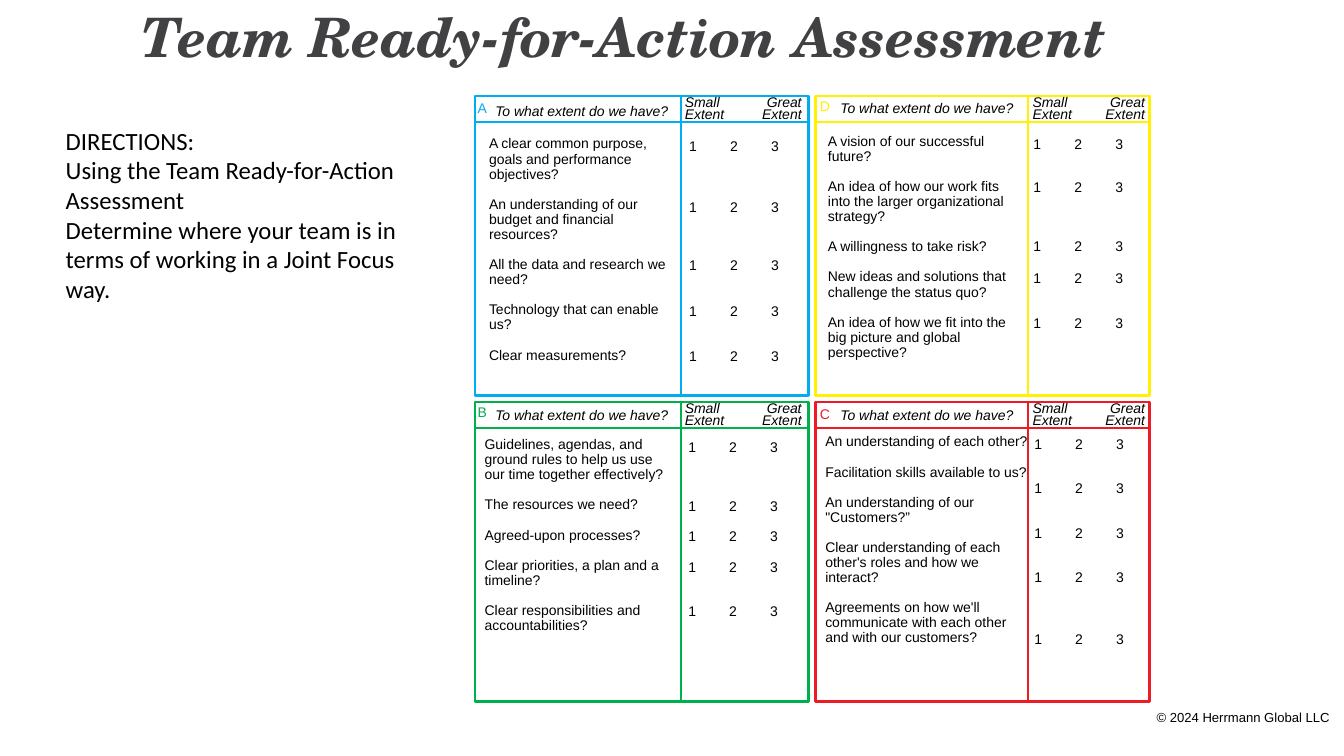
from lxml import etree
from pptx import Presentation, util as u
from pptx.dml.color import RGBColor
from pptx.enum import shapes, text
from pptx.oxml.ns import qn

LEFT, CENTER, RIGHT = text.PP_ALIGN.LEFT, text.PP_ALIGN.CENTER, text.PP_ALIGN.RIGHT
PANEL_WIDTH, PANEL_HEIGHT = 3.75, 3.37
TAB_STEP = 0.46

presentation = Presentation()
presentation.slide_width = u.Inches(15.11)
presentation.slide_height = u.Inches(8.5)
slide = presentation.slides.add_slide(presentation.slide_layouts[5])


def colour(value):
    return RGBColor.from_string(value)


def write(box, lines, size=11.3, font="Arial", ink="000000", italic=False,
          align=LEFT, spacing=None, gap=0, wrap=True, tabs=()):
    frame = box.text_frame
    frame.word_wrap = wrap
    for index, line in enumerate(lines):
        paragraph = frame.paragraphs[0] if index == 0 else frame.add_paragraph()
        paragraph.alignment = align
        if spacing:
            paragraph.line_spacing = spacing
        if index and gap:
            paragraph.space_before = u.Pt(gap)
        if tabs:
            stops = etree.SubElement(paragraph._p.get_or_add_pPr(), qn("a:tabLst"))
            for stop in tabs:
                etree.SubElement(stops, qn("a:tab"), pos=str(u.Inches(stop)), algn="l")
        run = paragraph.add_run()
        run.text = line
        run.font.size = u.Pt(size)
        run.font.name = font
        run.font.italic = italic
        run.font.color.rgb = colour(ink)


# Title
title = slide.shapes.title
title.left, title.top = u.Inches(1.49), u.Inches(0.07)
title.width, title.height = u.Inches(13.6), u.Inches(1.05)
title.text_frame.vertical_anchor = text.MSO_ANCHOR.TOP
write(title, ["Team Ready-for-Action Assessment"], 44, "TeX Gyre Schola", "414042",
      italic=True, spacing=0.9)
title.text_frame.paragraphs[0].runs[0].font.bold = True

# Directions and copyright line
directions = slide.shapes.add_textbox(*map(u.Inches, (0.64, 1.36, 3.93, 2.12)))
write(directions, [
    "DIRECTIONS:",
    "Using the Team Ready-for-Action Assessment",
    "Determine where your team is in terms of working in a Joint Focus way.",
], 20, "Calibri")
copyright_line = slide.shapes.add_textbox(*map(u.Inches, (12.83, 7.93, 2.29, 0.28)))
write(copyright_line, ["© 2024 Herrmann Global LLC"], 10.6, align=CENTER)

# Columns: panel left, divider, letter, question, small extent, great extent
left_column = (5.34, 7.66, 5.27, 5.47, 7.6, 8.42)
right_column = (9.17, 11.56, 9.12, 9.35, 11.51, 12.28)
upper, lower = 1.08, 4.52

# Quadrants: letter, its top, question top, colour, column, panel top,
# statements box, rating left, then each statement with the top of its rating
quadrants = [
    ("A", 1.07, 1.1, "00ADEE", left_column, upper, (5.4, 1.49, 2.2, 2.67), 7.65, [
        ("A clear common purpose, goals and performance objectives?", 1.5),
        ("An understanding of our budget and financial resources?", 2.18),
        ("All the data and research we need?", 2.84),
        ("Technology that can enable us?", 3.35),
        ("Clear measurements?", 3.86)]),
    ("D", 1.05, 1.07, "FFF100", right_column, upper, (9.21, 1.46, 2.26, 2.67), 11.52, [
        ("A vision of our successful future?", 1.47),
        ("An idea of how our work fits into the larger organizational strategy?", 1.96),
        ("A willingness to take risk?", 2.62),
        ("New ideas and solutions that challenge the status quo?", 2.98),
        ("An idea of how we fit into the big picture and global perspective?", 3.49)]),
    ("B", 4.49, 4.52, "00B04C", left_column, lower, (5.35, 4.87, 2.25, 2.33), 7.64, [
        ("Guidelines, agendas, and ground rules to help us use our time together effectively?", 4.88),
        ("The resources we need?", 5.54),
        ("Agreed-upon processes?", 5.88),
        ("Clear priorities, a plan and a timeline?", 6.23),
        ("Clear responsibilities and accountabilities?", 6.73)]),
    ("C", 4.51, 4.52, "ED1C24", right_column, lower, (9.18, 4.84, 2.48, 2.5), 11.53, [
        ("An understanding of each other?", 4.85),
        ("Facilitation skills available to us?", 5.34),
        ("An understanding of our \"Customers?”", 5.85),
        ("Clear understanding of each other's roles and how we interact?", 6.34),
        ("Agreements on how we'll communicate with each other and with our customers?", 7.04)]),
]

for (letter, letter_top, question_top, hue, column, top,
     statements_place, rating_left, statements) in quadrants:
    left, divider, letter_left, question_left, small_left, great_left = column

    # Panel outline
    panel = slide.shapes.add_shape(
        shapes.MSO_SHAPE.RECTANGLE,
        *map(u.Inches, (left, top, PANEL_WIDTH, PANEL_HEIGHT)))
    panel.shadow.inherit = False
    panel.fill.background()
    panel.line.color.rgb = colour(hue)
    panel.line.width = u.Pt(2.25)

    # Divider and header rule
    header_bottom = top + 0.29
    for ends in ((divider, top, divider, top + 3.35),
                 (left + PANEL_WIDTH, header_bottom, left, header_bottom)):
        rule = slide.shapes.add_connector(
            shapes.MSO_CONNECTOR.STRAIGHT, *map(u.Inches, ends))
        rule.line.color.rgb = colour(hue)
        rule.line.width = u.Pt(1.5)
        etree.SubElement(rule._element.spPr, qn("a:effectLst"))

    # Header
    letter_box = slide.shapes.add_textbox(
        *map(u.Inches, (letter_left, letter_top, 0.31, 0.29)))
    write(letter_box, [letter], ink=hue, wrap=False)
    question = slide.shapes.add_textbox(
        *map(u.Inches, (question_left, question_top, 2.17, 0.29)))
    write(question, ["To what extent do we have?"], italic=True, wrap=False)
    for word, extent_left, side in (("Small", small_left, LEFT), ("Great", great_left, RIGHT)):
        extent = slide.shapes.add_textbox(
            *map(u.Inches, (extent_left, top - 0.02, 0.69, 0.37)))
        write(extent, [word, "Extent"], italic=True, align=side, spacing=0.7)

    # Statements and their ratings
    statement_box = slide.shapes.add_textbox(*map(u.Inches, statements_place))
    write(statement_box, [statement for statement, _ in statements], spacing=0.9, gap=12.2)
    for _, rating_top in statements:
        rating = slide.shapes.add_textbox(
            *map(u.Inches, (rating_left, rating_top, 1.53, 0.29)))
        write(rating, ["1\t2\t3"], tabs=(TAB_STEP, 2 * TAB_STEP))

presentation.save("out.pptx")
